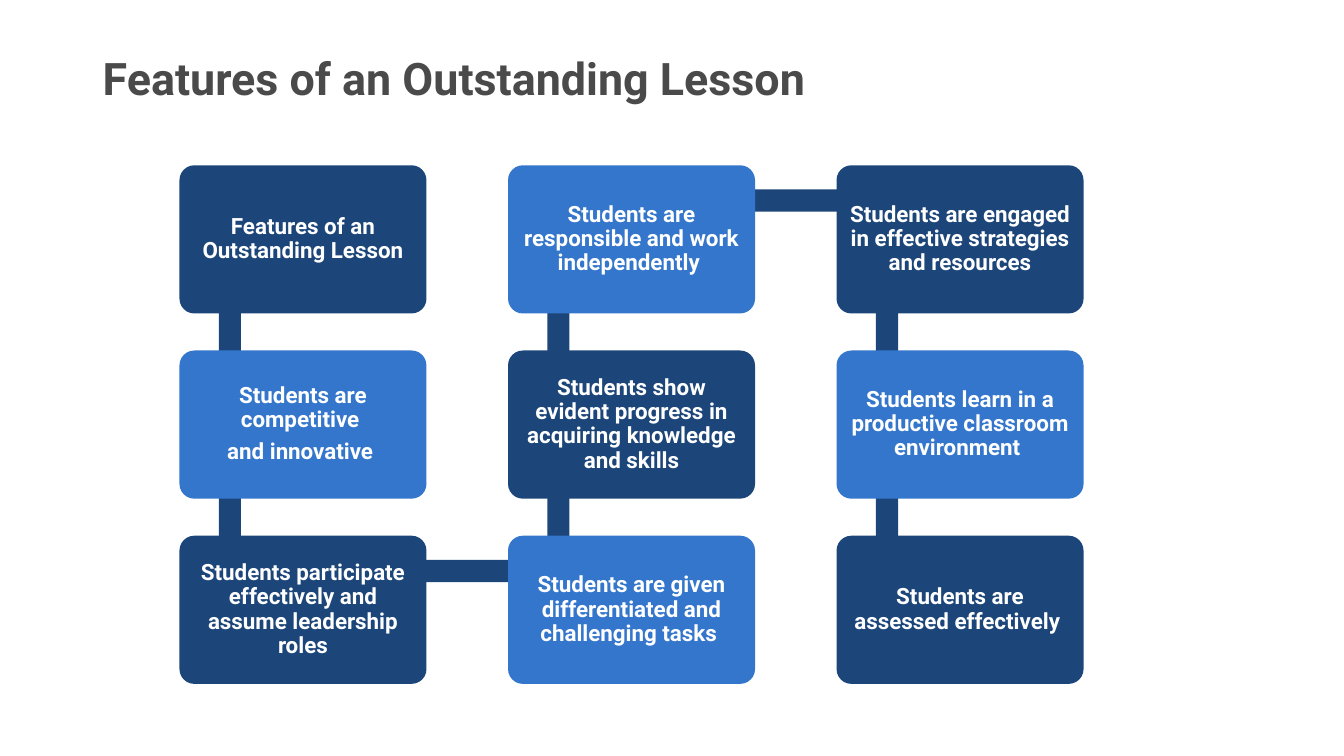
import pptx
import pptx.util
import pptx.dml.color
import pptx.enum.shapes
import pptx.enum.text

Inches, Pt = pptx.util.Inches, pptx.util.Pt
Shape = pptx.enum.shapes.MSO_SHAPE
Align = pptx.enum.text.PP_ALIGN

# Content: the cards in reading order, each a tuple of paragraphs
TITLE = "Features of an Outstanding Lesson"
FEATURES = [
    ("Features of an Outstanding Lesson",),
    ("Students are competitive ", "and innovative "),
    ("Students participate effectively and assume leadership roles",),
    ("Students are given differentiated and challenging tasks ",),
    ("Students show evident progress in acquiring knowledge and skills",),
    ("Students are responsible and work independently ",),
    ("Students are engaged in effective strategies and resources",),
    ("Students learn in a productive classroom environment ",),
    ("Students are assessed effectively ",),
]

THEME = {
    "font": "Roboto",
    "title_color": "4A4A4A", "title_size": 32,
    "card_colors": ("1C4679", "3376CC"),
    "card_text": "FFFFFF", "card_size": 16,
    "bar_color": "1C4679",
}

# Grid, in inches: the path runs down, up and down again
ROWS = 3
LEFT, TOP = 1.78, 1.64
CARD_W, CARD_H = 2.45, 1.47
COL_STEP, ROW_STEP = CARD_W * 1.33, CARD_H * 1.25
JOINT_X, JOINT_Y = 0.5, 0.35
BAR = 0.22


def card_corner(index):
    col, row = divmod(index, ROWS)
    if col % 2:
        row = ROWS - 1 - row
    return LEFT + col * COL_STEP, TOP + row * ROW_STEP


def rgb(value):
    return pptx.dml.color.RGBColor.from_string(value)


def add_block(page, kind, left, top, width, height, color):
    block = page.shapes.add_shape(
        kind, Inches(left), Inches(top), Inches(width), Inches(height))
    block.shadow.inherit = False
    block.fill.solid()
    block.fill.fore_color.rgb = rgb(color)
    block.line.fill.background()
    return block


def write(box, lines, size, color, align, gap=0):
    frame = box.text_frame
    frame.word_wrap = True
    frame.vertical_anchor = pptx.enum.text.MSO_ANCHOR.MIDDLE
    for number, line in enumerate(lines):
        para = frame.add_paragraph() if number else frame.paragraphs[0]
        para.alignment = align
        para.line_spacing = 0.9
        para.space_after = Pt(gap)
        span = para.add_run()
        span.text = line
        span.font.name = THEME["font"]
        span.font.size = Pt(size)
        span.font.bold = True
        span.font.color.rgb = rgb(color)


def add_bar(page, index):
    x1, y1 = card_corner(index)
    x2, y2 = card_corner(index + 1)
    left, top = min(x1, x2) + JOINT_X, min(y1, y2) + JOINT_Y
    if x1 == x2:
        place = left - BAR / 2, top, BAR, ROW_STEP
    else:
        place = left, top - BAR / 2, COL_STEP, BAR
    add_block(page, Shape.RECTANGLE, *place, THEME["bar_color"])


def add_card(page, index, lines):
    color = THEME["card_colors"][index % 2]
    card = add_block(page, Shape.ROUNDED_RECTANGLE, *card_corner(index),
                     CARD_W, CARD_H, color)
    card.adjustments[0] = 0.1
    frame = card.text_frame
    frame.margin_left = frame.margin_right = Inches(0.07)
    frame.margin_top = frame.margin_bottom = Inches(0.07)
    write(card, lines, THEME["card_size"], THEME["card_text"],
          Align.CENTER, gap=0.35 * THEME["card_size"])


def main():
    deck = pptx.Presentation()
    deck.slide_width, deck.slide_height = Inches(13.33), Inches(7.5)
    page = deck.slides.add_slide(deck.slide_layouts[6])

    # Title
    title = page.shapes.add_textbox(
        Inches(0.92), Inches(0.4), Inches(11.15), Inches(0.81))
    write(title, [TITLE], THEME["title_size"], THEME["title_color"], Align.LEFT)

    # Bars lie behind the cards
    for index in range(len(FEATURES) - 1):
        add_bar(page, index)
    for index, lines in enumerate(FEATURES):
        add_card(page, index, lines)

    deck.save("out.pptx")


if __name__ == "__main__":
    main()
